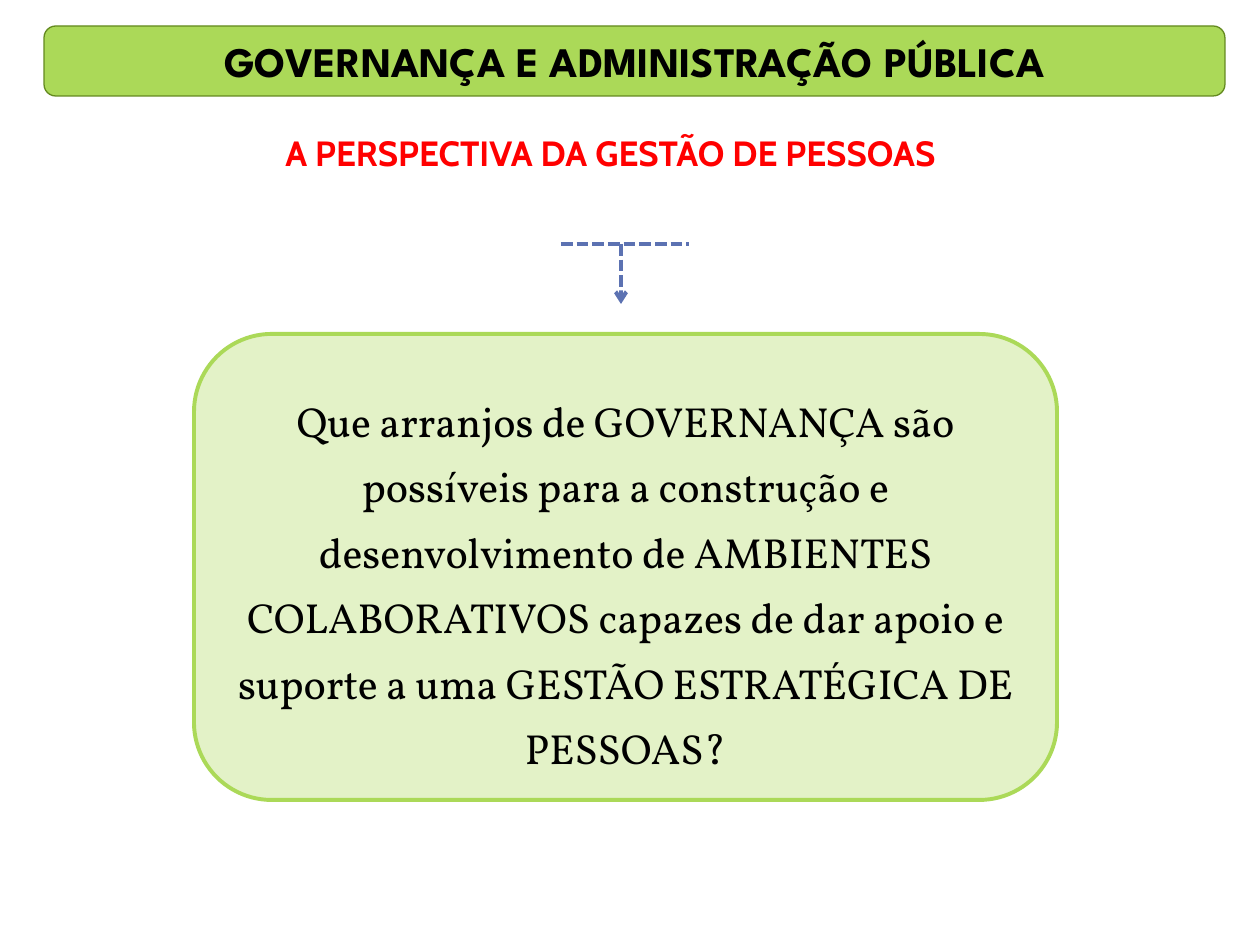
from lxml import etree
from pptx import Presentation
from pptx.dml.color import RGBColor
from pptx.enum.dml import MSO_LINE
from pptx.enum.shapes import MSO_CONNECTOR, MSO_SHAPE
from pptx.enum.text import MSO_ANCHOR, PP_ALIGN
from pptx.oxml.ns import qn
from pptx.util import Emu, Pt

PX = 914400 // 126
ROUND_RECT = MSO_SHAPE.ROUNDED_RECTANGLE
ALTERNATE = MSO_SHAPE.FLOWCHART_ALTERNATE_PROCESS
STRAIGHT = MSO_CONNECTOR.STRAIGHT
DASH = MSO_LINE.SQUARE_DOT
TOP, MIDDLE = MSO_ANCHOR.TOP, MSO_ANCHOR.MIDDLE
CENTER = PP_ALIGN.CENTER

COLORS = {
    "green": "ABD958",
    "dark_green": "63891F",
    "pale_green": "E3F2C7",
    "blue": "5C72B2",
    "red": "FF0000",
    "black": "000000",
}
FONTS = {
    "title": {"name": "League Spartan", "size": Pt(24), "bold": True},
    "subtitle": {"name": "Cabin", "size": Pt(20), "bold": True},
    "question": {"name": "Vollkorn", "size": Pt(24), "bold": False},
}


def rgb(name):
    return RGBColor.from_string(COLORS[name])


class SlideBuilder:
    def __init__(self, prs):
        self.slide = prs.slides.add_slide(prs.slide_layouts[6])

    def box(self, kind, at, fill, line, width):
        sp = self.slide.shapes.add_shape(kind, *(Emu(v * PX) for v in at))
        sp.shadow.inherit = False
        sp.fill.solid()
        sp.fill.fore_color.rgb = rgb(fill)
        sp.line.color.rgb = rgb(line)
        sp.line.width = Pt(width)
        return sp

    def text_box(self, at):
        return self.slide.shapes.add_textbox(*(Emu(v * PX) for v in at))

    def put_text(self, sp, text, style, color="black", anchor=MIDDLE, top=6, spacing=1.0):
        tf = sp.text_frame
        tf.word_wrap = True
        tf.vertical_anchor = anchor
        tf.margin_top = Emu(top * PX)
        p = tf.paragraphs[0]
        p.alignment = CENTER
        p.line_spacing = spacing
        r = p.add_run()
        r.text = text
        for key, value in FONTS[style].items():
            setattr(r.font, key, value)
        r.font.color.rgb = rgb(color)

    def dashed_line(self, *ends, arrow=False):
        cx = self.slide.shapes.add_connector(STRAIGHT, *(Emu(v * PX) for v in ends))
        cx.line.color.rgb = rgb("blue")
        cx.line.width = Pt(2.25)
        cx.line.dash_style = DASH
        sp_pr = cx._element.spPr
        if arrow:
            etree.SubElement(sp_pr.find(qn("a:ln")), qn("a:tailEnd"), type="arrow")
        etree.SubElement(sp_pr, qn("a:effectLst"))


def main():
    prs = Presentation()
    prs.slide_width, prs.slide_height = Emu(1260 * PX), Emu(945 * PX)
    s = SlideBuilder(prs)

    question = s.box(ALTERNATE, (194, 334, 863, 466), "pale_green", "green", 2.25)
    s.put_text(
        question,
        "Que arranjos de GOVERNANÇA são possíveis para a construção e "
        "desenvolvimento de AMBIENTES COLABORATIVOS capazes de dar apoio e "
        "suporte a uma GESTÃO ESTRATÉGICA DE PESSOAS?",
        "question", top=26, spacing=1.3,
    )

    s.dashed_line(621, 244, 621, 304, arrow=True)
    s.dashed_line(561, 244, 689, 244)

    title = s.box(ROUND_RECT, (44, 26, 1181, 70), "green", "dark_green", 0.75)
    s.put_text(title, "GOVERNANÇA E ADMINISTRAÇÃO PÚBLICA", "title")

    subtitle = s.text_box((25, 125, 1171, 55))
    s.put_text(subtitle, "A PERSPECTIVA DA GESTÃO DE PESSOAS", "subtitle", "red", TOP)

    prs.save("out.pptx")


if __name__ == "__main__":
    main()
